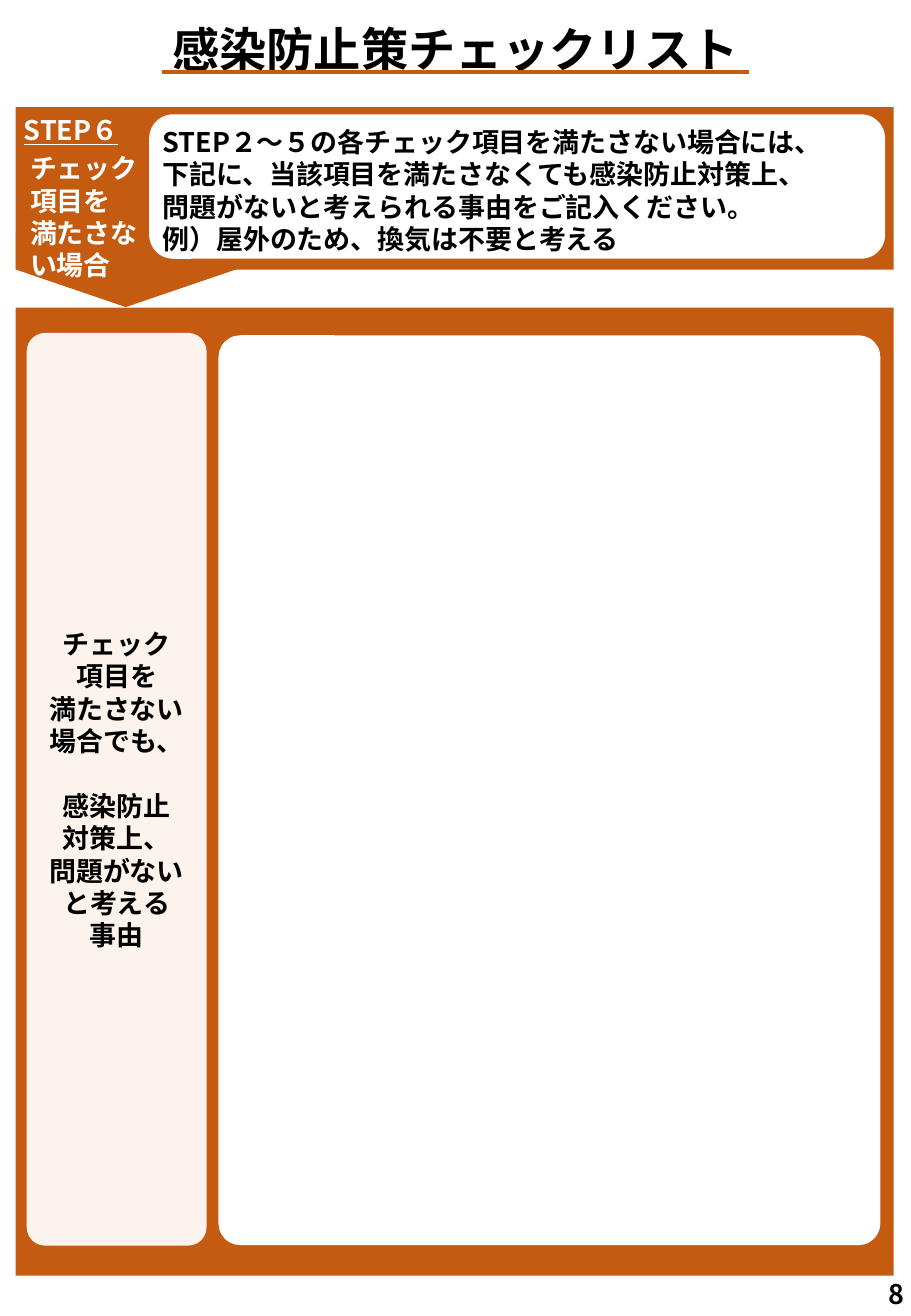
from lxml import etree
from pptx import Presentation
from pptx.dml.color import RGBColor
from pptx.enum.shapes import MSO_CONNECTOR, MSO_SHAPE
from pptx.enum.text import MSO_ANCHOR, PP_ALIGN
from pptx.oxml.ns import qn
from pptx.util import Cm, Pt

RECT, ROUNDED = MSO_SHAPE.RECTANGLE, MSO_SHAPE.ROUNDED_RECTANGLE
PENTAGON = MSO_SHAPE.PENTAGON
STRAIGHT = MSO_CONNECTOR.STRAIGHT
LEFT, CENTER = PP_ALIGN.LEFT, PP_ALIGN.CENTER
TOP, MIDDLE = MSO_ANCHOR.TOP, MSO_ANCHOR.MIDDLE

ORANGE = RGBColor(0xC5, 0x5A, 0x11)
CREAM = RGBColor(0xFD, 0xF3, 0xED)
WHITE = RGBColor(0xFF, 0xFF, 0xFF)
BLACK = RGBColor(0, 0, 0)
FONT = "Noto Sans CJK JP"
LINE_HEIGHT = 1.2


def write(frame, lines, size=16, color=BLACK, align=LEFT, underline=False,
          indent=0, space_before=0):
    """Append lines to a text frame; space_before applies to the first one."""
    for number, line in enumerate(lines):
        first = frame.paragraphs[0]
        paragraph = frame.add_paragraph() if first.runs else first
        paragraph.alignment = align
        paragraph.line_spacing = Pt(size * LINE_HEIGHT)
        paragraph.space_before = Pt(0 if number else space_before)
        paragraph._p.get_or_add_pPr().set("marL", str(Cm(indent)))
        run = paragraph.add_run()
        run.text = line
        font = run.font
        font.size, font.bold, font.underline = Pt(size), True, underline
        font.color.rgb = color
        font.name = FONT
        east_asian = etree.SubElement(run._r.get_or_add_rPr(), qn("a:ea"))
        east_asian.set("typeface", FONT)


def set_frame(frame, anchor, across, down):
    frame.word_wrap = True
    frame.vertical_anchor = anchor
    frame.margin_left = frame.margin_right = Cm(across)
    frame.margin_top = frame.margin_bottom = Cm(down)
    return frame


def add_text_area(slide, left, top, width, height):
    area = slide.shapes.add_textbox(Cm(left), Cm(top), Cm(width), Cm(height))
    return set_frame(area.text_frame, TOP, 0.25, 0.13)


def add_block(slide, kind, left, top, width, height, fill, rounding=None):
    block = slide.shapes.add_shape(kind, Cm(left), Cm(top), Cm(width), Cm(height))
    block.shadow.inherit = False
    block.fill.solid()
    block.fill.fore_color.rgb = fill
    block.line.fill.background()
    if rounding is not None:
        block.adjustments[0] = rounding
    return block


def add_heading(slide, left, top, width, height):
    title = add_text_area(slide, left, top, width, height)
    write(title, ["感染防止策チェックリスト"], size=28, align=CENTER)
    # Rule under the title
    rule_y = Cm(top + 1.2)
    rule = slide.shapes.add_connector(
        STRAIGHT, Cm(left + 2.16), rule_y, Cm(left + 14.45), rule_y)
    rule.line.color.rgb = ORANGE
    rule.line.width = Pt(2.25)
    etree.SubElement(rule._element.spPr, qn("a:effectLst"))


def add_step_banner(slide, left, top, width, height):
    # Downward pointer below the band: a pentagon turned by 90 degrees
    length, breadth = 1.57, 4.6
    pointer = add_block(slide, PENTAGON, left + (breadth - length) / 2,
                        top + height + length / 2 - breadth / 2 - 0.79,
                        length, breadth, ORANGE, 0.5)
    pointer.rotation = 90
    add_block(slide, RECT, left, top, width, height, ORANGE)
    add_block(slide, ROUNDED, left + 2.79, top + 0.15, 15.39, 3.02, WHITE)
    # Step label
    label = add_text_area(slide, left - 0.08, top, 3.02, 3.81)
    write(label, ["STEP６"], color=WHITE, underline=True)
    write(label, ["チェック", "項目を", "満たさな", "い場合"],
          color=WHITE, indent=0.13, space_before=3.6)
    # Instructions
    instructions = add_text_area(slide, left + 2.82, top + 0.25, 15.6, 3)
    write(instructions, [
        "STEP２～５の各チェック項目を満たさない場合には、",
        "下記に、当該項目を満たさなくても感染防止対策上、",
        "問題がないと考えられる事由をご記入ください。",
        "例）屋外のため、換気は不要と考える",
    ])


def add_reason_form(slide, left, top, width, height):
    add_block(slide, RECT, left, top, width, height, ORANGE)
    # Question on the left
    question = add_block(slide, ROUNDED, left + 0.23, top + 0.53, 3.76, 19.08,
                         CREAM, 0.102)
    frame = set_frame(question.text_frame, MIDDLE, 0.18, 0.1)
    write(frame, ["チェック", "項目を", "満たさない", "場合でも、"], align=CENTER)
    write(frame, ["感染防止", "対策上、", "問題がない", "と考える", "事由"],
          align=CENTER, space_before=16 * LINE_HEIGHT)
    # Space for the answer
    add_block(slide, ROUNDED, left + 4.24, top + 0.58, 13.84, 19.02, WHITE, 0.033)


def add_page_number(slide, left, top, width, height):
    number = add_text_area(slide, left, top, width, height)
    number.margin_right = 0
    write(number, ["8"])


def main():
    deck = Presentation()
    deck.slide_width, deck.slide_height = Cm(19.05), Cm(27.51)
    slide = deck.slides.add_slide(deck.slide_layouts[6])
    add_heading(slide, 1.22, 0.3, 16.61, 1.45)
    add_step_banner(slide, 0.33, 2.24, 18.36, 3.4)
    add_reason_form(slide, 0.33, 6.43, 18.36, 20.24)
    add_page_number(slide, 18.34, 26.57, 0.71, 0.94)
    deck.save("out.pptx")


if __name__ == "__main__":
    main()
